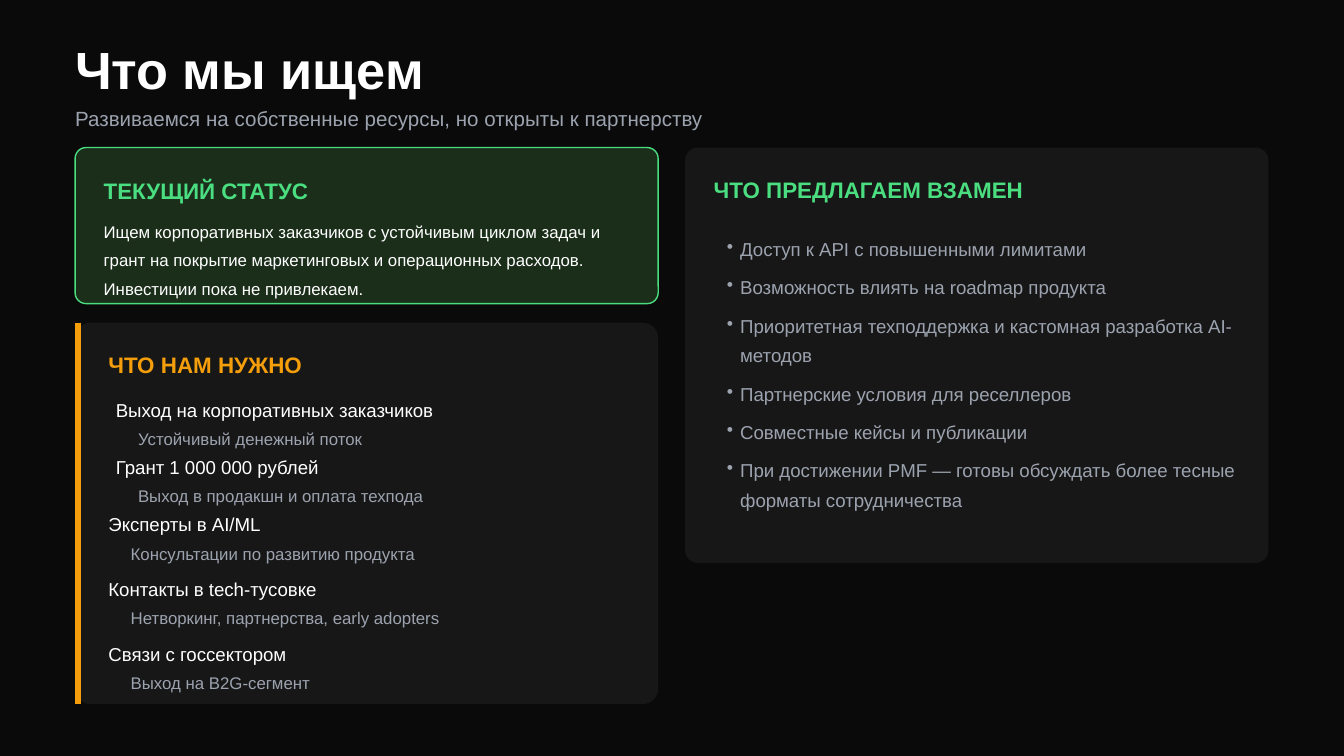
"""Build the partnership slide: current status, needs and what is offered in return."""
from lxml.etree import SubElement
from pptx import Presentation
from pptx.dml.color import RGBColor as RGB
from pptx.enum.shapes import MSO_CONNECTOR as LINE, MSO_SHAPE as SHAPE
from pptx.oxml.ns import qn
from pptx.util import Cm, Pt

TITLE = "Что мы ищем"
SUBTITLE = "Развиваемся на собственные ресурсы, но открыты к партнерству"
STATUS = (
    "Ищем корпоративных заказчиков с устойчивым циклом задач и грант на покрытие "
    "маркетинговых и операционных расходов. Инвестиции пока не привлекаем."
)
NEEDS = [
    ("Выход на корпоративных заказчиков", "Устойчивый денежный поток", 2.19, 7.54),
    ("Грант 1 000 000 рублей", "Выход в продакшн и оплата техпода", 2.19, 8.62),
    ("Эксперты в AI/ML", "Консультации по развитию продукта", 2.05, 9.7),
    ("Контакты в tech-тусовке", "Нетворкинг, партнерства, early adopters", 2.05, 10.92),
    ("Связи с госсектором", "Выход на B2G-сегмент", 2.05, 12.15),
]
OFFERS = [
    "Доступ к API с повышенными лимитами",
    "Возможность влиять на roadmap продукта",
    "Приоритетная техподдержка и кастомная разработка AI-методов",
    "Партнерские условия для реселлеров",
    "Совместные кейсы и публикации",
    "При достижении PMF — готовы обсуждать более тесные форматы сотрудничества",
]
THEME = {
    "font": "Arial",
    "color": {
        "back": "0A0A0A", "card": "171717", "status": "1A2E1A", "white": "FFFFFF",
        "muted": "9CA3AF", "green": "4ADE80", "amber": "F59E0B",
    },
    "size": {"title": 28, "subtitle": 11, "heading": 12, "item": 10, "small": 9},
}
LEFT, RIGHT, TOP, CARD_W = 1.42, 12.95, 2.79, 11.02
NEEDS_TOP, NEEDS_H = 6.1, 7.21
CARDS = [
    (LEFT, TOP, 2.95, 0.07, "status", "green"),
    (LEFT, NEEDS_TOP, NEEDS_H, 0.04, "card", None),
    (RIGHT, TOP, 7.85, 0.03, "card", None),
]
HEADINGS = [
    ("ТЕКУЩИЙ СТАТУС", 1.96, 3.35, "green"),
    ("ЧТО НАМ НУЖНО", 2.05, 6.63, "amber"),
    ("ЧТО ПРЕДЛАГАЕМ ВЗАМЕН", 13.49, 3.33, "green"),
]
DETAIL_DX, DETAIL_DY = 0.42, 0.57
INDENT = 0.25


def color(name):
    return RGB.from_string(THEME["color"][name])


def apply(obj, values):
    for name, value in values.items():
        setattr(obj, name, value)


def add_card(s, x, y, h, radius, fill, line):
    sp = s.shapes.add_shape(SHAPE.ROUNDED_RECTANGLE, Cm(x), Cm(y), Cm(CARD_W), Cm(h))
    sp.adjustments[0] = radius
    sp.shadow.inherit = False
    sp.fill.solid()
    sp.fill.fore_color.rgb = color(fill)
    if line:
        sp.line.color.rgb = color(line)
        sp.line.width = Pt(0.75)
    else:
        sp.line.fill.background()


def add_accent(s, x, y, h):
    sp = s.shapes.add_connector(LINE.STRAIGHT, Cm(x), Cm(y), Cm(x), Cm(y + h))
    sp.line.color.rgb = color("amber")
    sp.line.width = Pt(3)
    SubElement(sp.element.spPr, qn("a:effectLst"))


def add_bullet(p):
    pPr = p._p.get_or_add_pPr()
    pPr.set("marL", str(Cm(INDENT)))
    pPr.set("indent", str(-Cm(INDENT)))
    clr = SubElement(pPr, qn("a:buClr"))
    SubElement(clr, qn("a:srgbClr")).set("val", THEME["color"]["muted"])
    SubElement(pPr, qn("a:buChar")).set("char", "•")


def add_text(s, lines, box, size, tint, bold=False, spacing=None, gap=0, bullets=False):
    tf = s.shapes.add_textbox(*map(Cm, box)).text_frame
    apply(tf, {
        "word_wrap": True, "margin_left": Cm(INDENT if bullets else 0),
        "margin_top": 0, "margin_right": 0, "margin_bottom": 0,
    })
    for i, line in enumerate(lines):
        p = tf.add_paragraph() if i else tf.paragraphs[0]
        if spacing:
            p.line_spacing = spacing
        if i and gap:
            p.space_before = Pt(gap)
        if bullets:
            add_bullet(p)
        r = p.add_run()
        r.text = line
        apply(r.font, {"name": THEME["font"], "size": Pt(THEME["size"][size]), "bold": bold})
        r.font.color.rgb = color(tint)


def main():
    prs = Presentation()
    apply(prs, {"slide_width": Cm(25.4), "slide_height": Cm(14.29)})
    s = prs.slides.add_slide(prs.slide_layouts[6])
    s.background.fill.solid()
    s.background.fill.fore_color.rgb = color("back")

    add_text(s, [TITLE], (LEFT, 0.71, 23.04, 1.14), "title", "white", bold=True)
    add_text(s, [SUBTITLE], (LEFT, 2.01, 23.04, 0.43), "subtitle", "muted")
    for card in CARDS:
        add_card(s, *card)
    add_accent(s, LEFT + 0.05, NEEDS_TOP, NEEDS_H)
    for text, x, y, tint in HEADINGS:
        add_text(s, [text], (x, y, 10.1, 0.48), "heading", tint, bold=True)
    add_text(s, [STATUS], (1.96, 4.04, 10.1, 1.52), "small", "white", spacing=1.4)
    for need, detail, x, y in NEEDS:
        add_text(s, [need], (x, y, 10.06, 0.41), "item", "white")
        add_text(s, [detail], (x + DETAIL_DX, y + DETAIL_DY, 9.63, 0.38), "small", "muted")
    add_text(s, OFFERS, (13.49, 4.37, 9.96, 4.7), "item", "muted",
             spacing=1.3, gap=5, bullets=True)
    prs.save("out.pptx")


if __name__ == "__main__":
    main()
